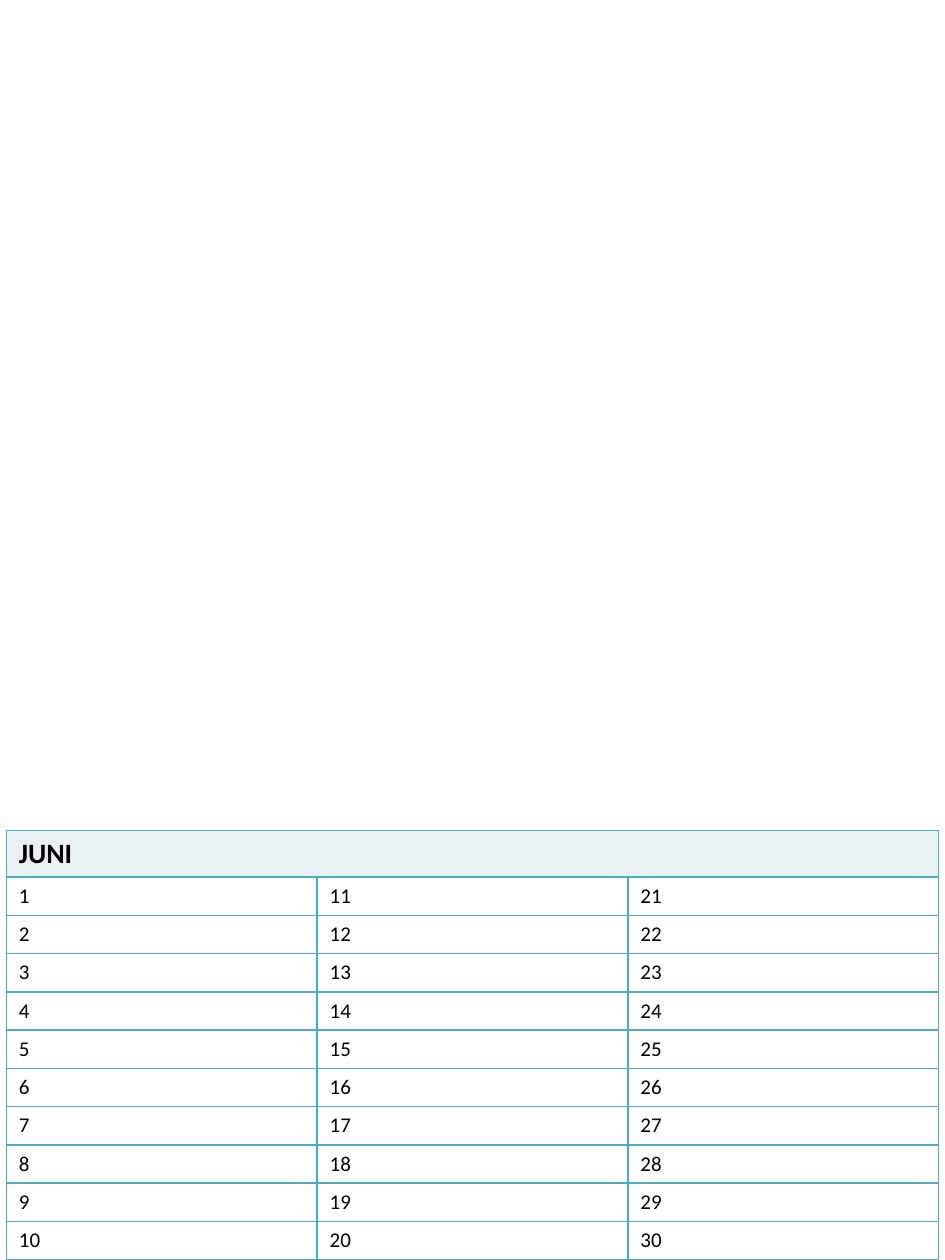
from dataclasses import dataclass

from lxml.etree import SubElement
from pptx import Presentation
from pptx.dml.color import RGBColor
from pptx.oxml.ns import qn
from pptx.util import Inches, Pt


@dataclass(frozen=True)
class Theme:
    font: str = "Calibri"
    ink: str = "000000"
    paper: str = "FFFFFF"
    header: str = "E9F1F5"
    rule: str = "4BACC6"
    rule_width: float = 1
    month_size: float = 16
    day_size: float = 12


class CalendarPage:
    WIDTH, HEIGHT = 7.5, 10
    MARGIN, TOP = 0.05, 6.59
    HEADER_ROW, DAY_ROW = 0.37, 0.3

    def __init__(self, theme):
        self.theme = theme
        self.deck = Presentation()
        self.deck.slide_width = Inches(self.WIDTH)
        self.deck.slide_height = Inches(self.HEIGHT)
        self.slide = self.deck.slides.add_slide(self.deck.slide_layouts[6])

    def borders(self, cell):
        properties = cell._tc.get_or_add_tcPr()
        for position, side in enumerate(("lnL", "lnR", "lnT", "lnB")):
            line = properties.makeelement(qn(f"a:{side}"), w=str(Pt(self.theme.rule_width)))
            fill = SubElement(line, qn("a:solidFill"))
            SubElement(fill, qn("a:srgbClr"), val=self.theme.rule)
            properties.insert(position, line)

    def cell(self, cell, text, size, fill, bold=False):
        cell.fill.solid()
        cell.fill.fore_color.rgb = RGBColor.from_string(fill)
        self.borders(cell)
        cell.text_frame.text = text
        for run in cell.text_frame.paragraphs[0].runs:
            run.font.name = self.theme.font
            run.font.size = Pt(size)
            run.font.bold = bold
            run.font.color.rgb = RGBColor.from_string(self.theme.ink)

    def month(self, name, days, columns):
        theme = self.theme
        per_column = days // columns
        width = self.WIDTH - 2 * self.MARGIN
        height = self.HEADER_ROW + per_column * self.DAY_ROW
        calendar = self.slide.shapes.add_table(
            per_column + 1, columns, Inches(self.MARGIN), Inches(self.TOP),
            Inches(width), Inches(height)).table
        for row in calendar.rows:
            row.height = Inches(self.DAY_ROW)
        calendar.rows[0].height = Inches(self.HEADER_ROW)

        # Month heading across all columns
        calendar.cell(0, 0).merge(calendar.cell(0, columns - 1))
        for column in range(columns):
            self.cell(calendar.cell(0, column), "" if column else name,
                      theme.month_size, theme.header, bold=True)

        # Days run down each column in turn
        for index in range(days):
            column, row = divmod(index, per_column)
            self.cell(calendar.cell(row + 1, column), str(index + 1),
                      theme.day_size, theme.paper)


def main():
    page = CalendarPage(Theme())
    page.month("JUNI", days=30, columns=3)
    page.deck.save("out.pptx")


if __name__ == "__main__":
    main()
